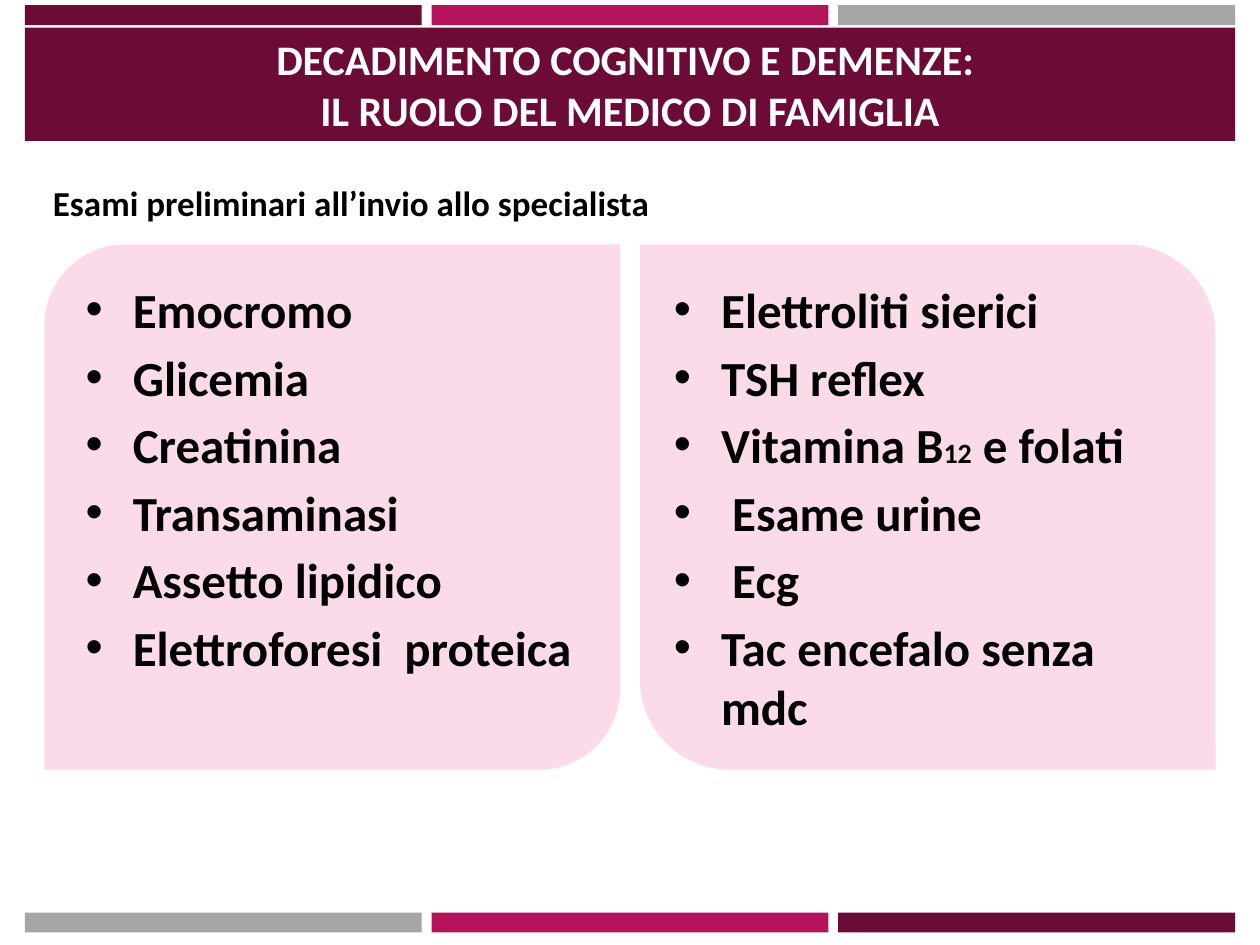
"""Build a slide on the tests to run before a dementia referral."""
import dataclasses
import typing

import lxml.etree
import pptx
import pptx.dml.color
import pptx.enum.shapes
import pptx.enum.text
import pptx.oxml.ns
import pptx.util

Pt = pptx.util.Pt
Align = pptx.enum.text.PP_ALIGN
Kind = pptx.enum.shapes.MSO_SHAPE
Run = tuple[str, float]


@dataclasses.dataclass(frozen=True)
class Theme:
    font: str = "Calibri"
    plum: str = "6B0B36"
    rose: str = "B5135C"
    grey: str = "A6A6A6"
    pink: str = "F59DC5"
    white: str = "FFFFFF"
    black: str = "000000"
    title: float = 24
    lead: float = 20
    body: float = 28
    small: float = 16


THEME = Theme()


class Box(typing.NamedTuple):
    left: float
    top: float
    width: float
    height: float

    def points(self) -> list[int]:
        return [Pt(side) for side in self]


class Panel(typing.NamedTuple):
    box: Box
    curves: tuple[float, float]
    text: Box
    items: list[list[Run]]


def make_shape(slide, box: Box, color: str, kind=Kind.RECTANGLE, alpha: int = 100):
    shape = slide.shapes.add_shape(kind, *box.points())
    shape.shadow.inherit = False
    shape.fill.solid()
    shape.fill.fore_color.rgb = pptx.dml.color.RGBColor.from_string(color)
    shape.line.fill.background()
    if alpha < 100:
        tint = shape.fill._xPr.find(".//" + pptx.oxml.ns.qn("a:srgbClr"))
        lxml.etree.SubElement(tint, pptx.oxml.ns.qn("a:alpha"), val=str(alpha * 1000))
    return shape


def write(frame, lines: list[list[Run]], *, color: str = THEME.black,
          align=Align.LEFT, indent: float = 0, before: float = 0) -> None:
    frame.word_wrap = True
    for index, runs in enumerate(lines):
        para = frame.paragraphs[0] if index == 0 else frame.add_paragraph()
        para.alignment = align
        para.space_before = Pt(before)
        if indent:
            props = para._p.get_or_add_pPr()
            props.set("marL", str(Pt(indent)))
            props.set("indent", str(-Pt(indent)))
            lxml.etree.SubElement(props, pptx.oxml.ns.qn("a:buFont"), typeface="Arial")
            lxml.etree.SubElement(props, pptx.oxml.ns.qn("a:buChar"), char="•")
        for text, size in runs:
            run = para.add_run()
            run.text = text
            run.font.name = THEME.font
            run.font.size = Pt(size)
            run.font.bold = True
            run.font.color.rgb = pptx.dml.color.RGBColor.from_string(color)


def draw_bars(slide, top: float, colors: list[str]) -> None:
    for index, color in enumerate(colors):
        make_shape(slide, Box(14.2 + 232.4 * index, top, 226.8, 11.4), color)


def draw_panel(slide, panel: Panel) -> None:
    shape = make_shape(slide, panel.box, THEME.pink, Kind.ROUND_2_DIAG_RECTANGLE, 37)
    for index, curve in enumerate(panel.curves):
        shape.adjustments[index] = curve
    label = slide.shapes.add_textbox(*panel.text.points())
    write(label.text_frame, panel.items, indent=27, before=5)


def plain(*texts: str) -> list[list[Run]]:
    return [[(text, THEME.body)] for text in texts]


def main() -> None:
    deck = pptx.Presentation()
    deck.slide_width, deck.slide_height = Pt(720), Pt(540)
    slide = deck.slides.add_slide(deck.slide_layouts[6])

    bars = [THEME.plum, THEME.rose, THEME.grey]
    draw_bars(slide, 3, bars)
    draw_bars(slide, 521.5, bars[::-1])

    banner = make_shape(slide, Box(14.2, 15.8, 691.6, 64.8), THEME.plum)
    write(banner.text_frame,
          [[("DECADIMENTO COGNITIVO E DEMENZE: ", THEME.title)],
           [("IL RUOLO DEL MEDICO DI FAMIGLIA", THEME.title)]],
          color=THEME.white, align=Align.CENTER)

    lead = slide.shapes.add_textbox(*Box(23.2, 100.1, 360, 31).points())
    write(lead.text_frame, [[("Esami preliminari all’invio allo specialista", THEME.lead)]])

    first = plain("Emocromo", "Glicemia", "Creatinina", "Transaminasi",
                  "Assetto lipidico", "Elettroforesi  proteica")
    mixed = [("Vitamina B", THEME.body), ("12", THEME.small), (" e folati", THEME.body)]
    second = [*plain("Elettroliti sierici", "TSH reflex"), mixed,
              *plain(" Esame urine", " Ecg", "Tac encefalo senza mdc")]
    panels = [
        Panel(Box(25.4, 139.7, 329, 300.2), (0.154, 0), Box(41.8, 156.2, 329.8, 360), first),
        Panel(Box(365.6, 139.7, 329, 300.2), (0, 0.172), Box(378, 156.2, 306, 360), second),
    ]
    for panel in panels:
        draw_panel(slide, panel)
    deck.save("out.pptx")


if __name__ == "__main__":
    main()
